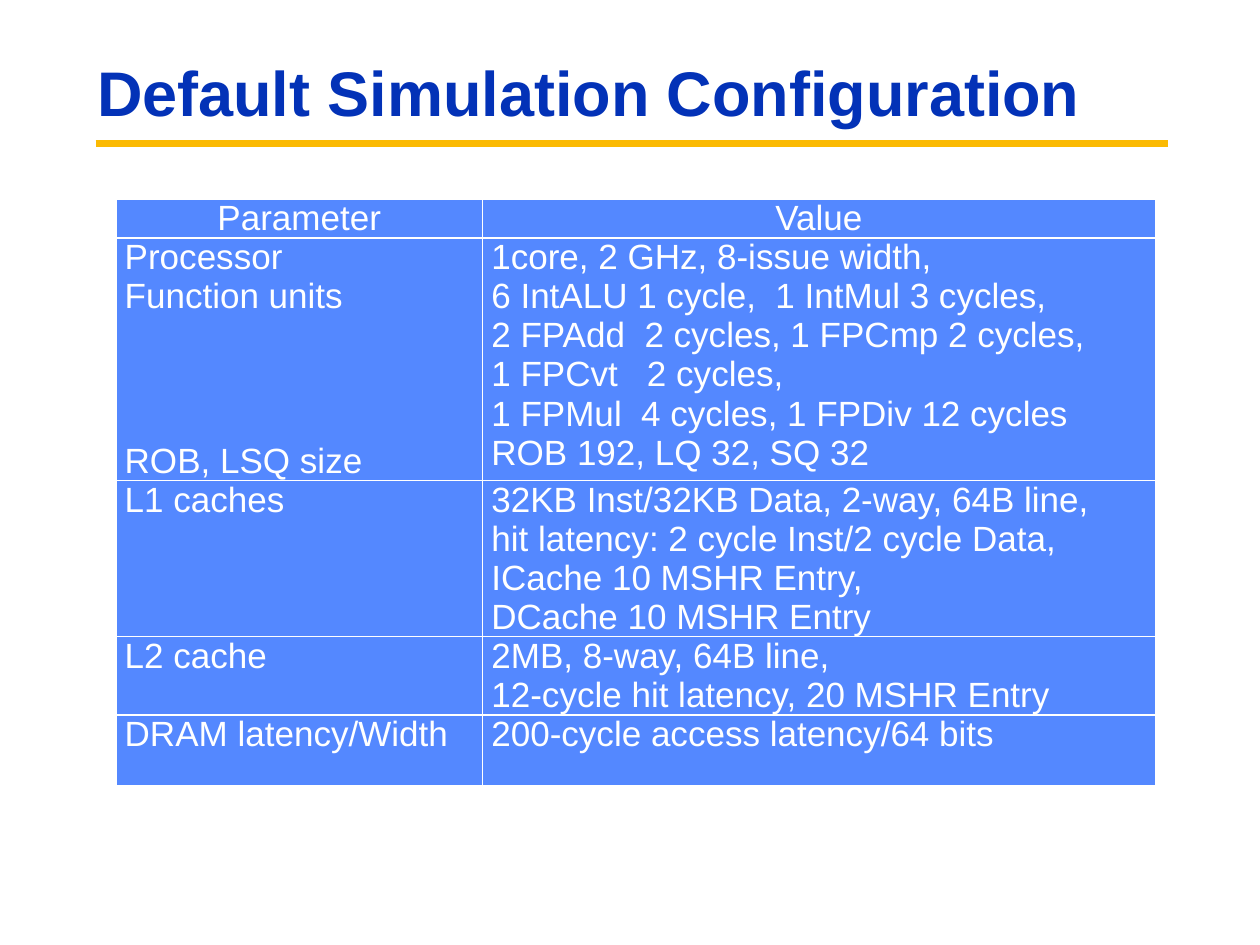
from dataclasses import dataclass

from lxml import etree
from pptx import Presentation, util as u
from pptx.dml.color import RGBColor
from pptx.enum import shapes, text
from pptx.oxml import ns

COLUMNS, ROWS = 100, 75


@dataclass(frozen=True)
class Theme:
    font: str = "Arial"
    title_color: str = "0332B7"
    rule_color: str = "FBBA03"
    cell_color: str = "5488FF"
    light: str = "FFFFFF"
    title_size: float = 36
    body_size: float = 20
    rule_width: float = 3.75
    border_width: float = 1


class PageBuilder:
    def __init__(self, deck, theme):
        self.theme = theme
        self.column = deck.slide_width / COLUMNS
        self.row = deck.slide_height / ROWS
        self.page = deck.slides.add_slide(deck.slide_layouts[5])

    def area(self, left, top, width, height):
        return [
            u.Emu(round(length * unit))
            for length, unit in zip(
                (left, top, width, height), (self.column, self.row) * 2
            )
        ]

    def add_span(self, para, words, size, color, bold=False):
        span = para.add_run()
        span.text = words
        span.font.name = self.theme.font
        span.font.size = u.Pt(size)
        span.font.bold = bold
        span.font.color.rgb = RGBColor.from_string(color)

    def title(self, words, *place):
        box = self.page.shapes.title
        box.left, box.top, box.width, box.height = self.area(*place)
        frame = box.text_frame
        frame.word_wrap = True
        frame.auto_size = text.MSO_AUTO_SIZE.NONE
        frame.vertical_anchor = text.MSO_ANCHOR.MIDDLE
        para = frame.paragraphs[0]
        para.alignment = text.PP_ALIGN.LEFT
        para.line_spacing = 0.9
        self.add_span(
            para, words, self.theme.title_size, self.theme.title_color, bold=True
        )

    def rule(self, left, right, level):
        ends = self.area(left, level, right, level)
        line = self.page.shapes.add_connector(shapes.MSO_CONNECTOR.STRAIGHT, *ends)
        line.line.color.rgb = RGBColor.from_string(self.theme.rule_color)
        line.line.width = u.Pt(self.theme.rule_width)
        etree.SubElement(line._element.spPr, ns.qn("a:effectLst"))

    def border(self, cell):
        properties = cell._tc.get_or_add_tcPr()
        for index, side in enumerate(("lnL", "lnR", "lnT", "lnB")):
            edge = etree.Element(
                ns.qn(f"a:{side}"), w=str(u.Pt(self.theme.border_width))
            )
            fill = etree.SubElement(edge, ns.qn("a:solidFill"))
            etree.SubElement(fill, ns.qn("a:srgbClr"), val=self.theme.light)
            properties.insert(index, edge)

    def fill_cell(self, cell, lines, alignment, gaps):
        cell.fill.solid()
        cell.fill.fore_color.rgb = RGBColor.from_string(self.theme.cell_color)
        cell.margin_left = cell.margin_right = u.Inches(0.07)
        cell.margin_top = cell.margin_bottom = 0
        self.border(cell)
        frame = cell.text_frame
        for index, words in enumerate(lines):
            para = frame.add_paragraph() if index else frame.paragraphs[0]
            para.alignment = alignment
            if words in gaps:
                para.space_before = u.Pt(gaps[words])
            self.add_span(para, words, self.theme.body_size, self.theme.light)

    def table(self, records, left, top, widths, heights, gaps):
        place = self.area(left, top, sum(widths), sum(heights))
        grid = self.page.shapes.add_table(len(records), len(widths), *place).table
        for column, width in zip(grid.columns, widths):
            column.width = u.Emu(round(width * self.column))
        for index, (record, height) in enumerate(zip(records, heights)):
            grid.rows[index].height = u.Emu(round(height * self.row))
            alignment = text.PP_ALIGN.JUSTIFY if index else text.PP_ALIGN.CENTER
            for cell, lines in zip(grid.rows[index].cells, record):
                self.fill_cell(cell, lines, alignment, gaps)


CONFIGURATION = [
    (["Parameter"], ["Value"]),
    (
        ["Processor", "Function units", "ROB, LSQ size"],
        [
            "1core, 2 GHz, 8-issue width,",
            "6 IntALU 1 cycle,  1 IntMul 3 cycles,",
            "2 FPAdd  2 cycles, 1 FPCmp 2 cycles,",
            "1 FPCvt   2 cycles,",
            "1 FPMul  4 cycles, 1 FPDiv 12 cycles",
            "ROB 192, LQ 32, SQ 32",
        ],
    ),
    (
        ["L1 caches"],
        [
            "32KB Inst/32KB Data, 2-way, 64B line,",
            "hit latency: 2 cycle Inst/2 cycle Data,",
            "ICache 10 MSHR Entry,",
            "DCache 10 MSHR Entry",
        ],
    ),
    (["L2 cache"], ["2MB, 8-way, 64B line,", "12-cycle hit latency, 20 MSHR Entry"]),
    (["DRAM latency/Width"], ["200-cycle access latency/64 bits"]),
]


def main():
    deck = Presentation()
    deck.slide_width, deck.slide_height = u.Inches(10), u.Inches(7.5)
    builder = PageBuilder(deck, Theme())
    builder.rule(7.6, 92.7, 11.4)
    builder.title("Default Simulation Configuration", 6.7, 3.6, 82.5, 8.1)
    builder.table(
        CONFIGURATION,
        left=9.2,
        top=15.8,
        widths=(29.1, 53.4),
        heights=(3.1, 19.2, 12.4, 6.2, 5.6),
        gaps={"ROB, LSQ size": 71.5},
    )
    deck.save("out.pptx")


if __name__ == "__main__":
    main()
